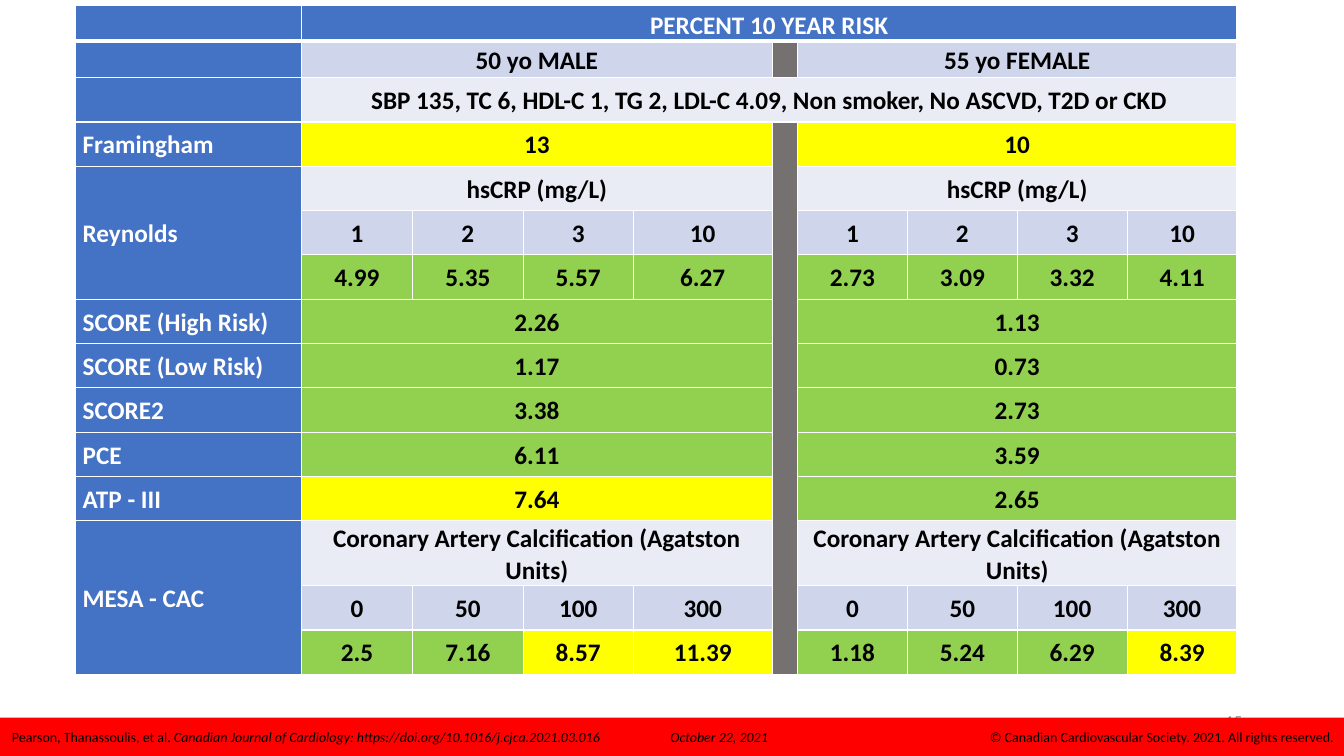
from lxml import etree
from pptx import Presentation
from pptx.dml.color import RGBColor
from pptx.enum.shapes import MSO_SHAPE
from pptx.enum.text import MSO_ANCHOR, PP_ALIGN
from pptx.oxml.ns import qn
from pptx.util import Pt

PX = 9144
RECT = MSO_SHAPE.RECTANGLE
LEFT, MID, RIGHT = PP_ALIGN.LEFT, PP_ALIGN.CENTER, PP_ALIGN.RIGHT
TOP, CENTER, BOTTOM = MSO_ANCHOR.TOP, MSO_ANCHOR.MIDDLE, MSO_ANCHOR.BOTTOM
COLORS = {
    "blue": "4472C4", "pale": "CFD5EA", "light": "E9EBF5", "gray": "767171",
    "low": "92D050", "high": "FFFF00", "red": "FF0000", "white": "FFFFFF",
    "black": "000000", "page": "8C8C8C",
}
LIMIT = 7.5
MALE, GAP, FEMALE, LAST = 1, 5, 6, 9
COLS = [224, 110, 110, 109, 138, 25, 109, 109, 109, 109]
ROWS = [36, 36] + [44] * 10 + [62, 44, 44]
CAC = "Coronary Artery Calcification (Agatston Units)"
CRP = "hsCRP (mg/L)"
LABELS = {
    3: "Framingham", 4: "Reynolds", 7: "SCORE (High Risk)",
    8: "SCORE (Low Risk)", 9: "SCORE2", 10: "PCE", 11: "ATP - III",
    12: "MESA - CAC",
}
BANDS = {
    1: ("pale", ["50 yo MALE"], ["55 yo FEMALE"]),
    3: ("risk", ["13"], ["10"]),
    4: ("light", [CRP], [CRP]),
    5: ("pale", ["1", "2", "3", "10"], ["1", "2", "3", "10"]),
    6: ("risk", ["4.99", "5.35", "5.57", "6.27"],
        ["2.73", "3.09", "3.32", "4.11"]),
    7: ("risk", ["2.26"], ["1.13"]),
    8: ("risk", ["1.17"], ["0.73"]),
    9: ("risk", ["3.38"], ["2.73"]),
    10: ("risk", ["6.11"], ["3.59"]),
    11: ("risk", ["7.64"], ["2.65"]),
    12: ("light", [CAC], [CAC]),
    13: ("pale", ["0", "50", "100", "300"], ["0", "50", "100", "300"]),
    14: ("risk", ["2.5", "7.16", "8.57", "11.39"],
         ["1.18", "5.24", "6.29", "8.39"]),
}


class Deck:
    font = "Calibri"

    def __init__(self, wide, high):
        self.prs = Presentation()
        self.prs.slide_width, self.prs.slide_height = wide * PX, high * PX
        self.slide = self.prs.slides.add_slide(self.prs.slide_layouts[6])

    def color(self, name):
        return RGBColor.from_string(COLORS[name])

    def add_run(self, para, text, size, color, bold=False, italic=False):
        run = para.add_run()
        run.text = text
        font = run.font
        font.name, font.size = self.font, Pt(size)
        font.bold, font.italic = bold, italic
        font.color.rgb = self.color(color)

    def text(self, box, runs, size, color, align=LEFT, anchor=TOP):
        frame = self.slide.shapes.add_textbox(*(n * PX for n in box)).text_frame
        frame.word_wrap = True
        frame.vertical_anchor = anchor
        para = frame.paragraphs[0]
        para.alignment = align
        for words, italic in runs:
            self.add_run(para, words, size, color, italic=italic)

    def bar(self, box, fill):
        shape = self.slide.shapes.add_shape(RECT, *(n * PX for n in box))
        shape.shadow.inherit = False
        shape.fill.solid()
        shape.fill.fore_color.rgb = self.color(fill)
        shape.line.fill.background()

    def grid(self, left, top, cols, rows):
        table = self.slide.shapes.add_table(
            len(rows), len(cols), left * PX, top * PX,
            sum(cols) * PX, sum(rows) * PX).table
        table.horz_banding = False
        for col, wide in zip(table.columns, cols):
            col.width = wide * PX
        for row, high in zip(table.rows, rows):
            row.height = high * PX
        for r in range(len(rows)):
            for c in range(len(cols)):
                cell = table.cell(r, c)
                self.edge(cell, 3 if r == 1 else 1, 3 if r == 0 else 1)
                cell.margin_left = cell.margin_right = 7 * PX
                cell.margin_top = cell.margin_bottom = 0
        self.table = table

    def edge(self, cell, top, bottom):
        props = cell._tc.get_or_add_tcPr()
        for side, size in (("L", 1), ("R", 1), ("T", top), ("B", bottom)):
            line = etree.SubElement(props, qn("a:ln" + side), w=str(Pt(size)))
            fill = etree.SubElement(line, qn("a:solidFill"))
            etree.SubElement(fill, qn("a:srgbClr"), val=COLORS["white"])

    def cell(self, r, c, fill, text="", down=1, over=1, color="black",
             align=MID, anchor=CENTER):
        cell = self.table.cell(r, c)
        if down * over > 1:
            cell.merge(self.table.cell(r + down - 1, c + over - 1))
        for i in range(r, r + down):
            for j in range(c, c + over):
                part = self.table.cell(i, j)
                part.fill.solid()
                part.fill.fore_color.rgb = self.color(fill)
        cell.vertical_anchor = anchor
        if text:
            para = cell.text_frame.paragraphs[0]
            para.alignment, para.line_spacing = align, 1.07
            self.add_run(para, text, 18, color, bold=True)

    def band(self, r, c, kind, texts):
        over = 4 // len(texts)
        for i, text in enumerate(texts):
            fill = kind
            if kind == "risk":
                fill = "high" if float(text) >= LIMIT else "low"
            self.cell(r, c + i * over, fill, text, over=over)


def main():
    deck = Deck(1333, 750)
    deck.text((942, 695, 300, 40), [("15", False)], 12, "page", RIGHT, CENTER)
    deck.bar((0, 712, 1333, 40), "red")
    deck.text((2, 718, 960, 27), [
        ("Pearson, Thanassoulis, et al. ", False),
        ("Canadian Journal of Cardiology: "
         "https://doi.org/10.1016/j.cjca.2021.03.016\t\t October 22, 2021", True),
    ], 10, "black")
    deck.text((972, 718, 371, 44), [
        ("© Canadian Cardiovascular Society. 2021. All rights reserved.", False),
    ], 10, "black")

    deck.grid(75, 5, COLS, ROWS)
    deck.cell(0, MALE, "blue", "PERCENT 10 YEAR RISK", over=LAST,
              color="white", anchor=BOTTOM)
    deck.cell(2, MALE, "light", "SBP 135, TC 6, HDL-C 1, TG 2, LDL-C 4.09, "
              "Non smoker, No ASCVD, T2D or CKD", over=LAST)
    deck.cell(1, GAP, "gray")
    deck.cell(3, GAP, "gray", down=12)
    for r in range(3):
        deck.cell(r, 0, "blue")
    for r, label in LABELS.items():
        down = 3 if r in (4, 12) else 1
        deck.cell(r, 0, "blue", label, down=down, color="white", align=LEFT)
    for r, (kind, male, female) in BANDS.items():
        deck.band(r, MALE, kind, male)
        deck.band(r, FEMALE, kind, female)
    deck.prs.save("out.pptx")


if __name__ == "__main__":
    main()
